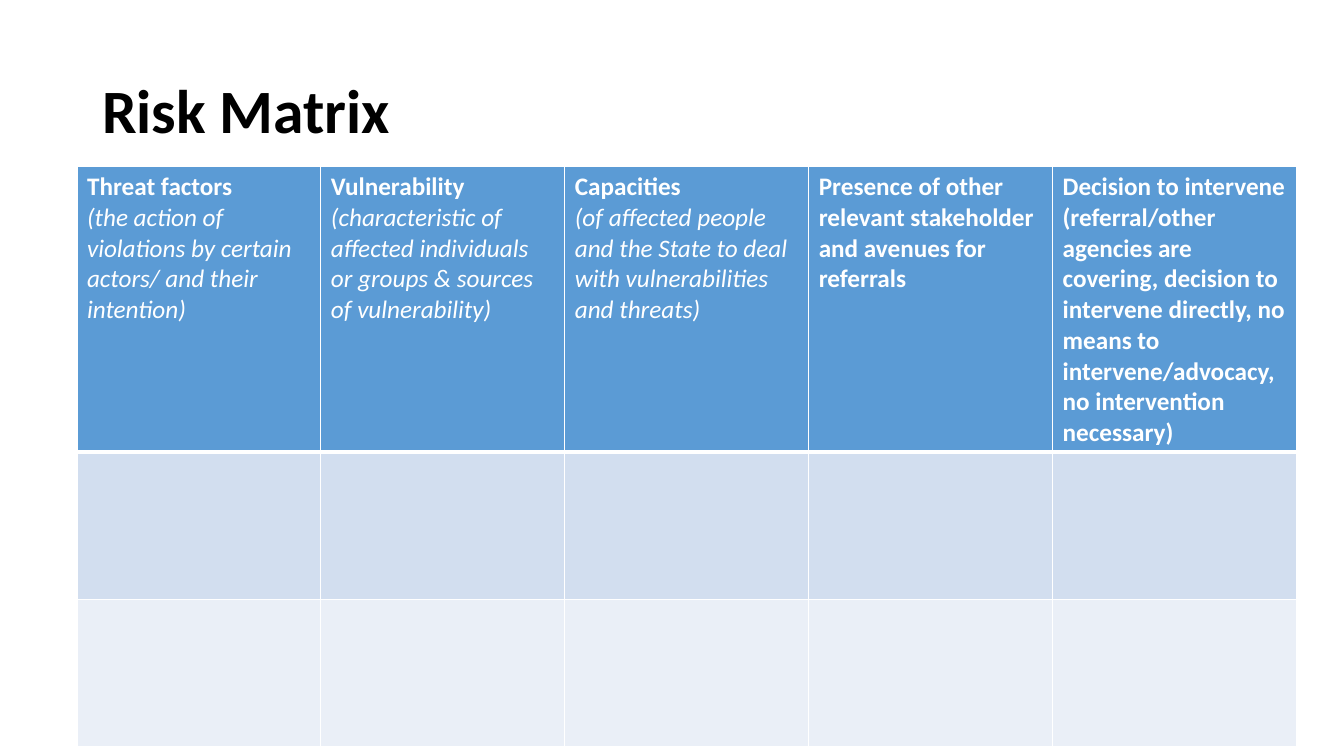
from dataclasses import dataclass

from lxml.etree import SubElement
from pptx import Presentation
from pptx.dml.color import RGBColor
from pptx.enum.text import MSO_ANCHOR
from pptx.oxml.ns import qn
from pptx.slide import Slide
from pptx.table import _Cell
from pptx.text.text import TextFrame
from pptx.util import Pt

WHITE = "FFFFFF"
BLUE = "5B9BD5"
BANDS = ["D2DEEF", "EAEFF7"]
WIDTH = 174.24
HEAD = 204
ROW = 105.12


@dataclass(frozen=True)
class Piece:
    text: str
    bold: bool = True


@dataclass(frozen=True)
class Column:
    lines: list[list[Piece]]


COLUMNS = [
    Column([
        [Piece("Threat factors")],
        [Piece("(the action of violations by certain actors/ and their intention)", False)],
    ]),
    Column([[
        Piece("Vulnerability "),
        Piece("(characteristic of affected individuals or groups & sources of vulnerability)", False),
    ]]),
    Column([
        [Piece("Capacities")],
        [Piece("(of affected people and the State to deal with vulnerabilities and threats)", False)],
    ]),
    Column([[Piece("Presence of other relevant stakeholder and avenues for referrals")]]),
    Column([[Piece(
        "Decision to intervene (referral/other agencies are covering, "
        "decision to intervene directly, no means to intervene/advocacy, "
        "no intervention necessary)"
    )]]),
]


def color(code: str) -> RGBColor:
    return RGBColor.from_string(code)


def write(frame: TextFrame, lines: list[list[Piece]], size: float, tint: str) -> None:
    for index, line in enumerate(lines):
        para = frame.paragraphs[0] if index == 0 else frame.add_paragraph()
        for piece in line:
            run = para.add_run()
            run.text = piece.text
            font = run.font
            font.name = "Calibri"
            font.size = Pt(size)
            font.bold = piece.bold
            font.italic = not piece.bold
            font.color.rgb = color(tint)


def paint(cell: _Cell, fill: str, top: float, bottom: float) -> None:
    props = cell._tc.get_or_add_tcPr()
    for side, width in {"L": 1, "R": 1, "T": top, "B": bottom}.items():
        edge = SubElement(props, qn(f"a:ln{side}"), w=str(Pt(width)))
        solid = SubElement(edge, qn("a:solidFill"))
        SubElement(solid, qn("a:srgbClr"), val=WHITE)
    cell.fill.solid()
    cell.fill.fore_color.rgb = color(fill)


def add_title(slide: Slide) -> None:
    frame = slide.shapes.add_textbox(Pt(66), Pt(28.8), Pt(828), Pt(104.4)).text_frame
    frame.word_wrap = True
    frame.vertical_anchor = MSO_ANCHOR.MIDDLE
    write(frame, [[Piece("Risk Matrix")]], 44, "000000")
    frame.paragraphs[0].line_spacing = 0.9


def add_matrix(slide: Slide) -> None:
    count = len(COLUMNS)
    fills = [BLUE, *BANDS]
    table = slide.shapes.add_table(
        len(fills), count, Pt(55), Pt(119),
        Pt(WIDTH * count), Pt(HEAD + ROW * len(BANDS)),
    ).table
    for index, fill in enumerate(fills):
        table.rows[index].height = Pt(ROW if index else HEAD)
        for cell in table.rows[index].cells:
            paint(cell, fill, 3 if index == 1 else 1, 1 if index else 3)
    for index, column in enumerate(COLUMNS):
        table.columns[index].width = Pt(WIDTH)
        write(table.cell(0, index).text_frame, column.lines, 18, WHITE)


def main() -> None:
    deck = Presentation()
    deck.slide_width = Pt(960)
    deck.slide_height = Pt(540)
    slide = deck.slides.add_slide(deck.slide_layouts[6])
    add_title(slide)
    add_matrix(slide)
    deck.save("out.pptx")


if __name__ == "__main__":
    main()
